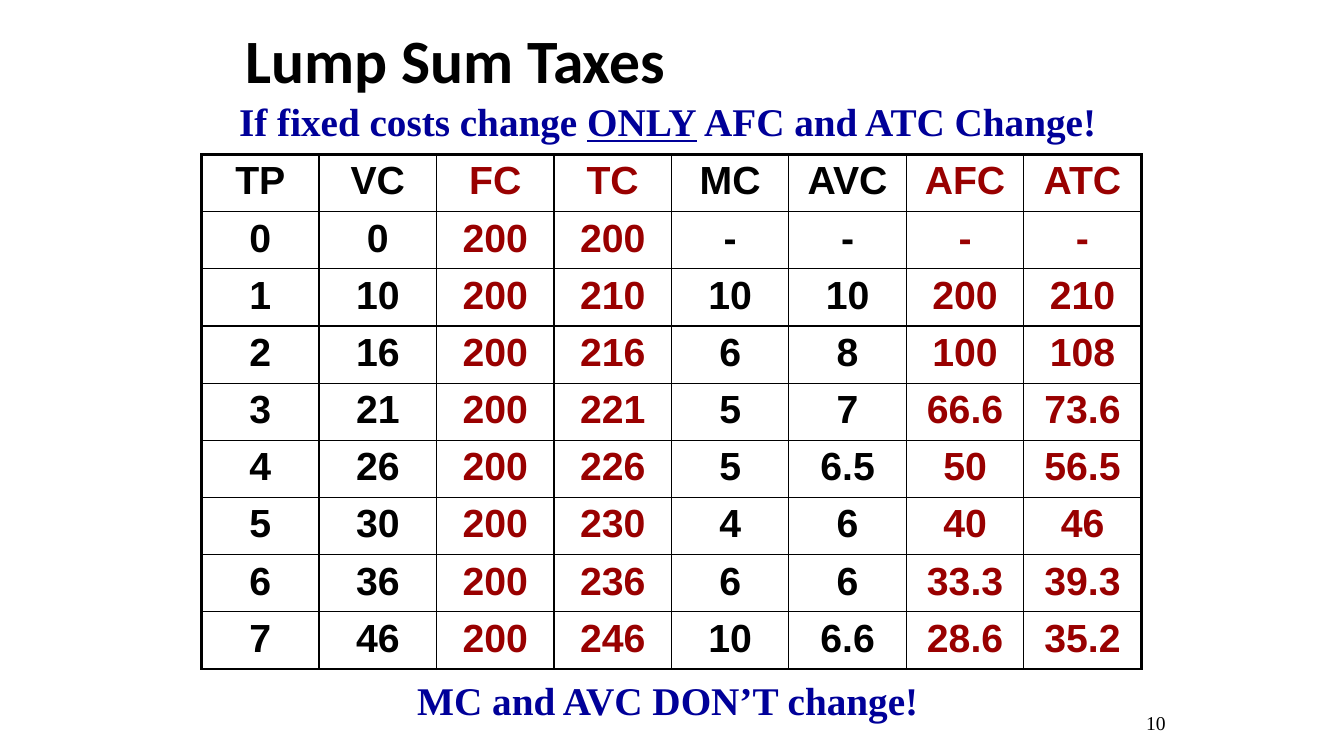
import pptx
import pptx.dml.color
import pptx.enum.text
import pptx.oxml
import pptx.oxml.ns
import pptx.util

Cm = pptx.util.Cm
Pt = pptx.util.Pt
RGBColor = pptx.dml.color.RGBColor
ALIGN = pptx.enum.text.PP_ALIGN
ANCHOR = pptx.enum.text.MSO_ANCHOR

BLACK = RGBColor(0x00, 0x00, 0x00)
WHITE = RGBColor(0xFF, 0xFF, 0xFF)
NAVY = RGBColor(0x00, 0x00, 0x99)
DARK_RED = RGBColor(0x99, 0x00, 0x00)

COSTS = [
    ["TP", "VC", "FC", "TC", "MC", "AVC", "AFC", "ATC"],
    ["0", "0", "200", "200", "-", "-", "-", "-"],
    ["1", "10", "200", "210", "10", "10", "200", "210"],
    ["2", "16", "200", "216", "6", "8", "100", "108"],
    ["3", "21", "200", "221", "5", "7", "66.6", "73.6"],
    ["4", "26", "200", "226", "5", "6.5", "50", "56.5"],
    ["5", "30", "200", "230", "4", "6", "40", "46"],
    ["6", "36", "200", "236", "6", "6", "33.3", "39.3"],
    ["7", "46", "200", "246", "10", "6.6", "28.6", "35.2"],
]
CHANGING_COSTS = {"FC", "TC", "AFC", "ATC"}
FILLED_COSTS = {"AVC", "AFC", "ATC"}
COLUMN_WIDTH = Cm(2.96)
ROW_HEIGHT = Cm(1.44)
INNER_LINE = Pt(1)
OUTER_LINE = Pt(2.25)


def add_run(paragraph, text, font, size, color, bold=True, underline=None):
    run = paragraph.add_run()
    run.text = text
    run.font.name = font
    run.font.size = Pt(size)
    run.font.bold = bold
    run.font.underline = underline
    run.font.color.rgb = color


def add_text_box(slide, left, top, width, height, align, anchor=ANCHOR.TOP):
    """Add an empty wrapping text box and return its first paragraph."""
    box = slide.shapes.add_textbox(Cm(left), Cm(top), Cm(width), Cm(height))
    frame = box.text_frame
    frame.word_wrap = True
    frame.vertical_anchor = anchor
    frame.paragraphs[0].alignment = align
    return frame.paragraphs[0]


def add_remark(slide, top, parts):
    """Add a centred remark from (text, underline) parts."""
    remark = add_text_box(slide, 5.5, top, 22.65, 1.44, ALIGN.CENTER)
    for text, underline in parts:
        add_run(remark, text, "Times New Roman", 28, NAVY, underline=underline)


def set_borders(cell, widths):
    """Draw the cell's edges, given in schema order: left, right, top, bottom."""
    properties = cell._tc.get_or_add_tcPr()
    for edge, width in zip("LRTB", widths):
        properties.append(pptx.oxml.parse_xml(
            f'<a:ln{edge} {pptx.oxml.ns.nsdecls("a")} w="{width}">'
            f'<a:solidFill><a:srgbClr val="{BLACK}"/></a:solidFill>'
            f'</a:ln{edge}>'))


def add_cost_table(slide, left, top):
    row_count, column_count = len(COSTS), len(COSTS[0])
    table = slide.shapes.add_table(
        row_count, column_count, Cm(left), Cm(top),
        COLUMN_WIDTH * column_count, ROW_HEIGHT * row_count).table
    table.first_row = False
    table.horz_banding = False
    for column in table.columns:
        column.width = COLUMN_WIDTH
    for row in table.rows:
        row.height = ROW_HEIGHT

    for r, values in enumerate(COSTS):
        for c, (cost, value) in enumerate(zip(COSTS[0], values)):
            cell = table.cell(r, c)
            on_outline = (c == 0, c == column_count - 1,
                          r == 0, r == row_count - 1)
            set_borders(cell, [OUTER_LINE if outer else INNER_LINE
                               for outer in on_outline])
            if cost in FILLED_COSTS:
                cell.fill.solid()
                cell.fill.fore_color.rgb = WHITE
            else:
                cell.fill.background()
            paragraph = cell.text_frame.paragraphs[0]
            paragraph.alignment = ALIGN.CENTER
            color = DARK_RED if cost in CHANGING_COSTS else BLACK
            add_run(paragraph, value, "Arial", 28, color)


def main():
    deck = pptx.Presentation()
    deck.slide_width = Cm(33.87)
    deck.slide_height = Cm(19.05)
    slide = deck.slides.add_slide(deck.slide_layouts[6])

    # Title
    title = add_text_box(slide, 5.93, 0, 21.59, 3.18, ALIGN.LEFT, ANCHOR.MIDDLE)
    title.line_spacing = 0.9
    add_run(title, "Lump Sum Taxes", "Calibri", 44, BLACK)

    # Cost table
    add_cost_table(slide, 5.08, 3.89)

    # Remarks above and below the table
    add_remark(slide, 2.33, [("If fixed costs change ", None), ("ONLY", True),
                             (" AFC and ATC Change!", None)])
    add_remark(slide, 16.93, [("MC and AVC DON’T change!", None)])

    # Slide number
    number = add_text_box(slide, 24.34, 17.78, 5.29, 1.27, ALIGN.RIGHT)
    add_run(number, "10", "Times New Roman", 14, BLACK, bold=False)

    deck.save("out.pptx")


if __name__ == "__main__":
    main()
